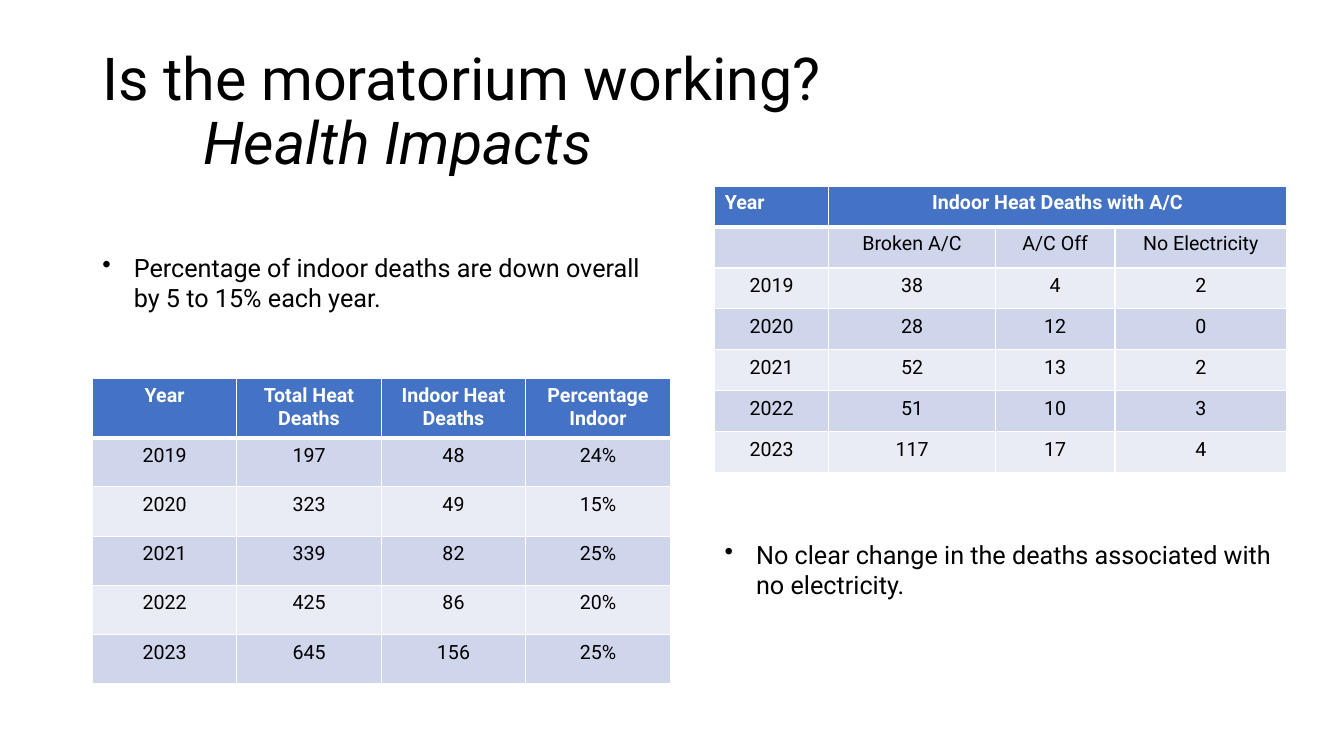
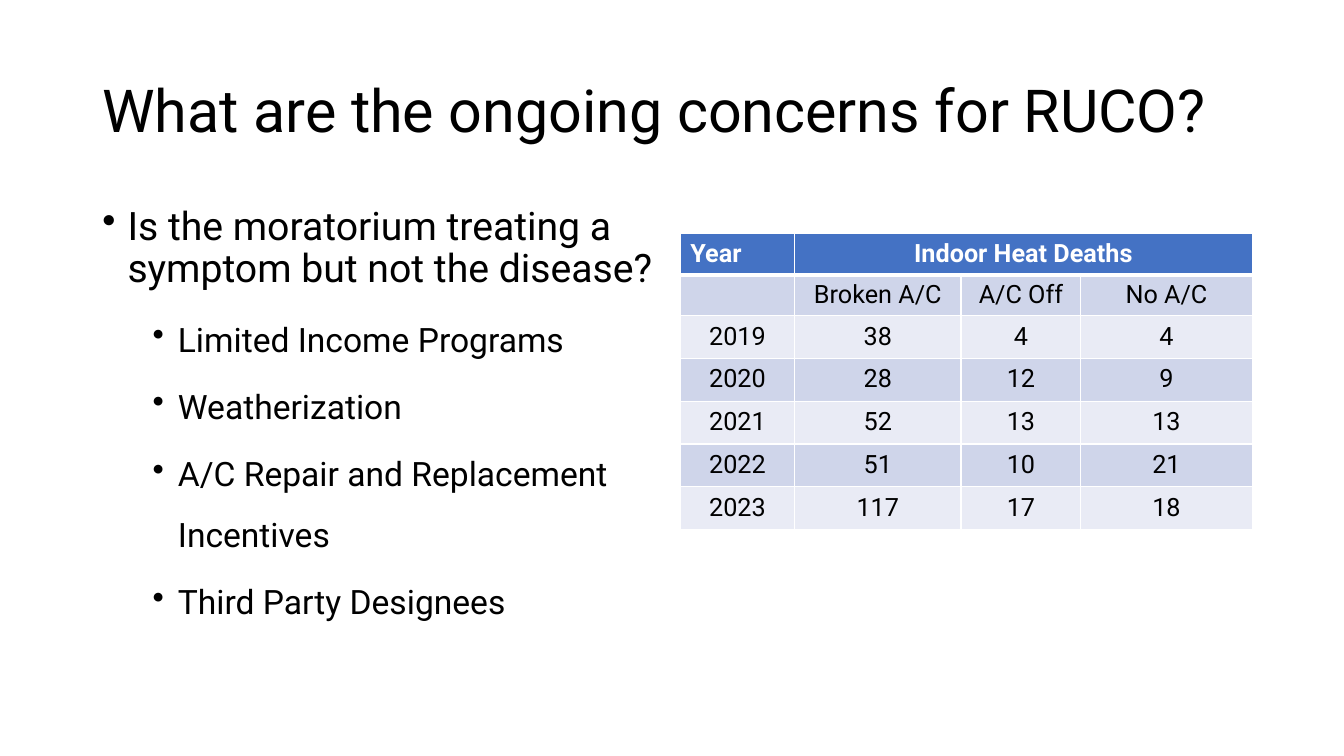
import pptx
import pptx.dml.color
import pptx.enum.text
import pptx.oxml.ns
import pptx.util
from lxml import etree

Pt = pptx.util.Pt
RGB = pptx.dml.color.RGBColor
ALIGN = pptx.enum.text.PP_ALIGN
ANCHOR = pptx.enum.text.MSO_ANCHOR
qn = pptx.oxml.ns.qn

FONT = "Roboto"
BLACK = RGB(0x00, 0x00, 0x00)
WHITE = RGB(0xFF, 0xFF, 0xFF)
BLUE = RGB(0x44, 0x72, 0xC4)
BANDS = [RGB(0xCF, 0xD5, 0xEA), RGB(0xE9, 0xEB, 0xF5)]

LEFT = 66
TITLE = (LEFT, 29, 828, 104)
CAUSES = [81.5, 119, 85.5, 122.5]  # column widths of the cause tables
YEARS = ["2019", "2020", "2021", "2022", "2023"]
BROKEN = ["38", "28", "52", "51", "117"]
OFF = ["4", "12", "13", "10", "17"]


def style(para, size, color=BLACK, bold=False, italic=False):
    font = para.font
    font.name, font.size = FONT, Pt(size)
    font.bold, font.italic = bold, italic
    font.color.rgb = color


def indent(para, margin, hang=0, bullet=False):
    props = para._p.get_or_add_pPr()
    props.set("marL", str(Pt(margin)))
    props.set("indent", str(Pt(-hang)))
    if bullet:
        etree.SubElement(props, qn("a:buChar")).set("char", "•")


def add_text(slide, box, lines):
    """Add a wrapped box and return its frame with one paragraph per line."""
    frame = slide.shapes.add_textbox(*map(Pt, box)).text_frame
    frame.word_wrap = True
    frame.text = "\n".join(lines)
    return frame


def add_title(slide, head, sub=None):
    frame = add_text(slide, TITLE, [head, sub] if sub else [head])
    frame.vertical_anchor = ANCHOR.MIDDLE
    for level, para in enumerate(frame.paragraphs):
        indent(para, 72 * level)
        para.line_spacing = 0.9
        style(para, 42.3, italic=level > 0)


def add_note(slide, box, text):
    para = add_text(slide, box, [text]).paragraphs[0]
    indent(para, 22.5, 22.5, bullet=True)
    style(para, 18)


def add_list(slide, box, lead, items):
    first, *rest = add_text(slide, box, [lead, *items]).paragraphs
    indent(first, 18, 18, bullet=True)
    first.line_spacing = 0.9
    style(first, 28)
    for para in rest:
        indent(para, 54, 18, bullet=True)
        para.line_spacing = 1.5
        para.space_before = Pt(5)
        style(para, 24)


def add_edges(cell, top, bottom):
    """Draw white cell borders; the side ones are 1 point wide."""
    props = cell._tc.get_or_add_tcPr()
    widths = {"a:lnL": 1, "a:lnR": 1, "a:lnT": top, "a:lnB": bottom}
    for place, (tag, width) in enumerate(widths.items()):
        line = etree.Element(qn(tag), w=str(Pt(width)))
        fill = etree.SubElement(line, qn("a:solidFill"))
        etree.SubElement(fill, qn("a:srgbClr")).set("val", str(WHITE))
        props.insert(place, line)


def add_grid(slide, left, top, widths, heights, rows, size, wide=0):
    """Add a banded table; its first `wide` rows keep the wide cell margins."""
    shape = slide.shapes.add_table(
        len(rows), len(widths), Pt(left), Pt(top), Pt(sum(widths)), Pt(sum(heights)))
    table = shape.table
    for col, width in zip(table.columns, widths):
        col.width = Pt(width)
    for r, (values, height) in enumerate(zip(rows, heights)):
        table.rows[r].height = Pt(height)
        for c, value in enumerate(values):
            cell = table.cell(r, c)
            cell.text = value
            cell.fill.solid()
            cell.fill.fore_color.rgb = BANDS[(r - 1) % 2] if r else BLUE
            if r >= wide:
                cell.margin_left = cell.margin_right = Pt(4.5)
                cell.margin_top = cell.margin_bottom = Pt(4.5)
            add_edges(cell, 3 if r == 1 else 1, 1 if r else 3)
            para = cell.text_frame.paragraphs[0]
            para.alignment = ALIGN.CENTER
            style(para, size, BLACK if r else WHITE, bold=r == 0)
    return table


def add_causes(slide, left, top, head, last, counts, size):
    """Add the table of indoor deaths by cause under one merged heading."""
    rows = [["Year", head, "", ""], ["", "Broken A/C", "A/C Off", last],
            *zip(YEARS, BROKEN, OFF, counts)]
    table = add_grid(slide, left, top, CAUSES, [29.2] * len(rows), rows, size, wide=2)
    table.cell(0, 1).merge(table.cell(0, 3))
    table.cell(0, 0).text_frame.paragraphs[0].alignment = ALIGN.LEFT


def add_health(slide):
    add_title(slide, "Is the moratorium working?", "Health Impacts")
    rows = [["Year", "Total Heat Deaths", "Indoor Heat Deaths", "Percentage Indoor"],
            *zip(YEARS, ["197", "323", "339", "425", "645"],
                 ["48", "49", "82", "86", "156"],
                 ["24%", "15%", "25%", "20%", "25%"])]
    add_grid(slide, LEFT, 270, [103.2] * 4, [28] + [35.2] * 5, rows, 14)
    add_causes(slide, 510.5, 133, "Indoor Heat Deaths with A/C", "No Electricity",
               ["2", "0", "2", "3", "4"], 14)
    add_note(slide, (LEFT, 176.5, 405, 51),
             "Percentage of indoor deaths are down overall by 5 to 15% each year.")
    add_note(slide, (510.5, 381.5, 408, 51),
             "No clear change in the deaths associated with no electricity.")


def add_concerns(slide):
    add_title(slide, "What are the ongoing concerns for RUCO?")
    add_list(slide, (LEFT, 144, 408, 367),
             "Is the moratorium treating a symptom but not the disease?",
             ["Limited Income Programs", "Weatherization",
              "A/C Repair and Replacement Incentives", "Third Party Designees"])
    add_causes(slide, 486, 167, "Indoor Heat Deaths", "No A/C",
               ["4", "9", "13", "21", "18"], 18)


def main():
    deck = pptx.Presentation()
    deck.slide_width, deck.slide_height = Pt(960), Pt(540)
    for build in (add_health, add_concerns):
        build(deck.slides.add_slide(deck.slide_layouts[6]))
    deck.save("out.pptx")


if __name__ == "__main__":
    main()
